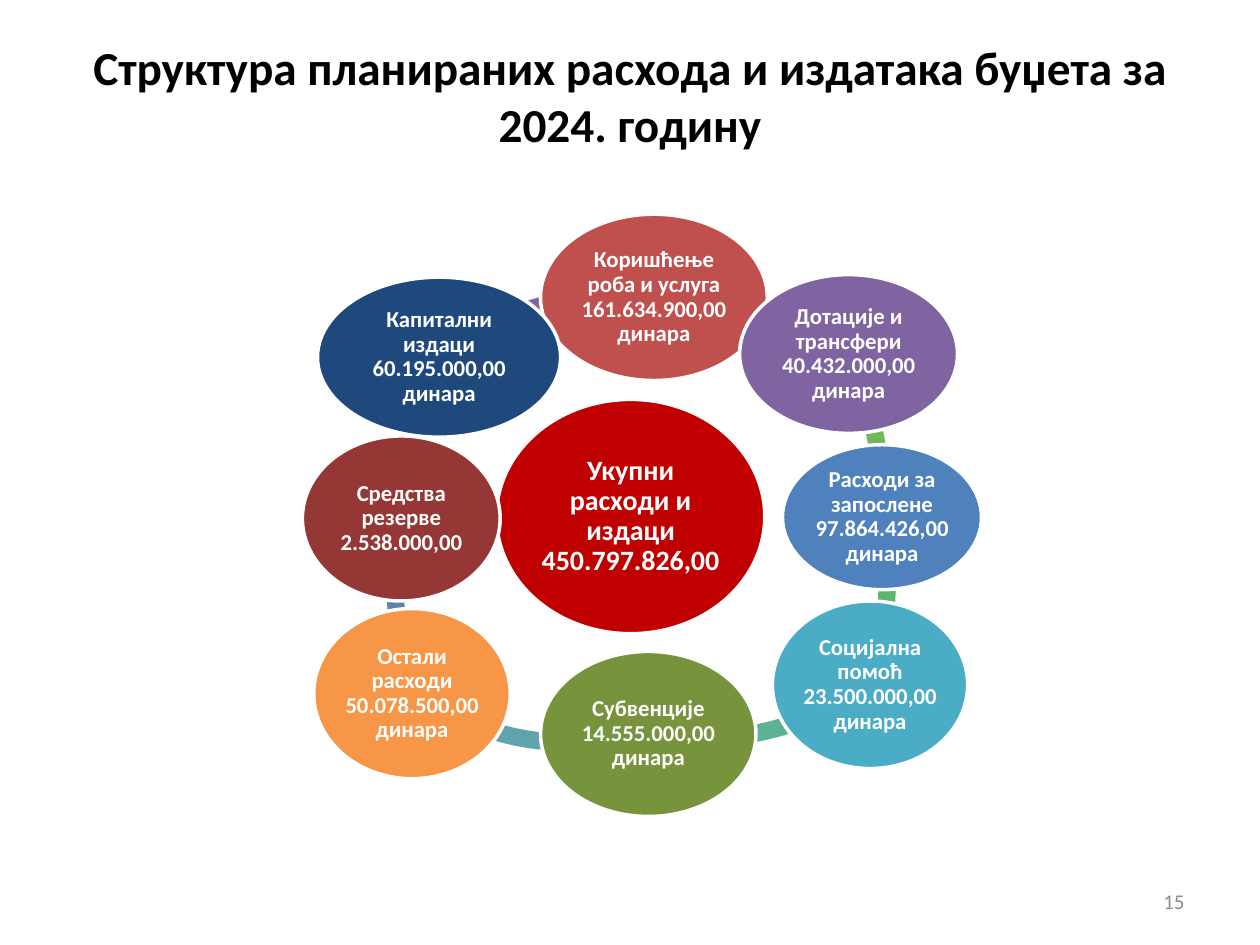
from pptx import Presentation
from pptx.dml.color import RGBColor
from pptx.enum.shapes import MSO_SHAPE
from pptx.enum.text import MSO_ANCHOR, MSO_AUTO_SIZE, PP_ALIGN
from pptx.util import Inches, Pt

ARC, OVAL = MSO_SHAPE.BLOCK_ARC, MSO_SHAPE.OVAL
CENTER, RIGHT = PP_ALIGN.CENTER, PP_ALIGN.RIGHT
MIDDLE = MSO_ANCHOR.MIDDLE
NO_FIT = MSO_AUTO_SIZE.NONE
FONT = "Calibri"
RING = 4.05
BAND = 0.034

# left and top within the diagram, start and end angle, colour
ARCS = [
    (0.38, 0.59, 136.94, 168.64, "8064A2"),
    (0.74, 0.17, 104.23, 127.34, "6362A6"),
    (0.67, 0.97, 93.54, 118.29, "6181A9"),
    (0.07, 0.21, 42.58, 76.77, "5FA4AD"),
    (1.22, 0.17, 30.44, 62.67, "5DB195"),
    (0.66, 0.91, 206.7, 14.24, "5CB46F"),
    (0.6, 0.1, 197.36, 4.69, "70B85A"),
    (1.03, 0.61, 157.35, 185.85, "9BBB59"),
]

# left and top within the diagram, width, height, colour, text, size
BUBBLES = [
    (1.54, 1.47, 2.13, 1.86, "C00000", "Укупни расходи и издаци 450.797.826,00", 16),
    (1.89, 0, 1.8, 1.32, "C0504D", "Коришћење роба и услуга 161.634.900,00 динара", 13),
    (3.47, 0.48, 1.73, 1.26, "8064A2", "Дотације и трансфери 40.432.000,00 динара", 13),
    (3.81, 1.83, 1.58, 1.15, "4F81BD", "Расходи за запослене 97.864.426,00\vдинара", 13),
    (3.73, 3.07, 1.55, 1.33, "4BACC6", "Социјална помоћ 23.500.000,00\vдинара", 13),
    (1.89, 3.47, 1.71, 1.31, "77933C", "Субвенције 14.555.000,00 динара", 13),
    (0.09, 3.13, 1.56, 1.35, "F79646", "Остали расходи 50.078.500,00 динара", 13),
    (0, 1.76, 1.57, 1.31, "953735", "Средства резерве 2.538.000,00", 13),
    (0.12, 0.5, 1.93, 1.27, "1F497D", "Капитални издаци 60.195.000,00 динара", 13),
]


def rgb(code):
    return RGBColor.from_string(code)


def write(shape, text, size, color, bold=True, align=CENTER, space=None, inset=None):
    frame = shape.text_frame
    frame.word_wrap = True
    frame.auto_size = NO_FIT
    frame.vertical_anchor = MIDDLE
    if inset is not None:
        frame.margin_left = frame.margin_right = Inches(inset)
        frame.margin_top = frame.margin_bottom = Inches(inset)
    frame.text = text
    para = frame.paragraphs[0]
    para.alignment = align
    if space:
        para.line_spacing = space
    for run in para.runs:
        font = run.font
        font.name, font.size, font.bold = FONT, Pt(size), bold
        font.color.rgb = rgb(color)


def add_form(shapes, kind, box, color):
    form = shapes.add_shape(kind, *map(Inches, box))
    form.shadow.inherit = False
    form.fill.solid()
    form.fill.fore_color.rgb = rgb(color)
    form.line.fill.background()
    return form


def add_title(slide, left, top, width, height):
    title = slide.shapes.title
    title.left, title.top = Inches(left), Inches(top)
    title.width, title.height = Inches(width), Inches(height)
    write(title, "Структура планираних расхода и издатака буџета за 2024. годину", 27, "000000")


def add_cycle(slide, left, top):
    """Ring of arcs behind the expense bubbles, with the total in the middle."""
    shapes = slide.shapes.add_group_shape().shapes
    for x, y, start, end, color in ARCS:
        arc = add_form(shapes, ARC, (left + x, top + y, RING, RING), color)
        for index, value in enumerate((start, end, BAND)):
            arc.adjustments[index] = value
    for x, y, width, height, color, text, size in BUBBLES:
        oval = add_form(shapes, OVAL, (left + x, top + y, width, height), color)
        oval.line.color.rgb = rgb("FFFFFF")
        oval.line.width = Pt(2)
        write(oval, text, size, "FFFFFF", space=0.9, inset=0.02)


def add_number(slide, *box):
    label = slide.shapes.add_textbox(*map(Inches, box))
    write(label, "15", 12, "8C8C8C", bold=False, align=RIGHT)


def main():
    deck = Presentation()
    deck.slide_width, deck.slide_height = Inches(10), Inches(7.5)
    slide = deck.slides.add_slide(deck.slide_layouts[5])
    add_title(slide, 0.5, 0.29, 9, 0.93)
    add_cycle(slide, 2.4, 1.7)
    add_number(slide, 7.17, 6.95, 2.33, 0.4)
    deck.save("out.pptx")


if __name__ == "__main__":
    main()
